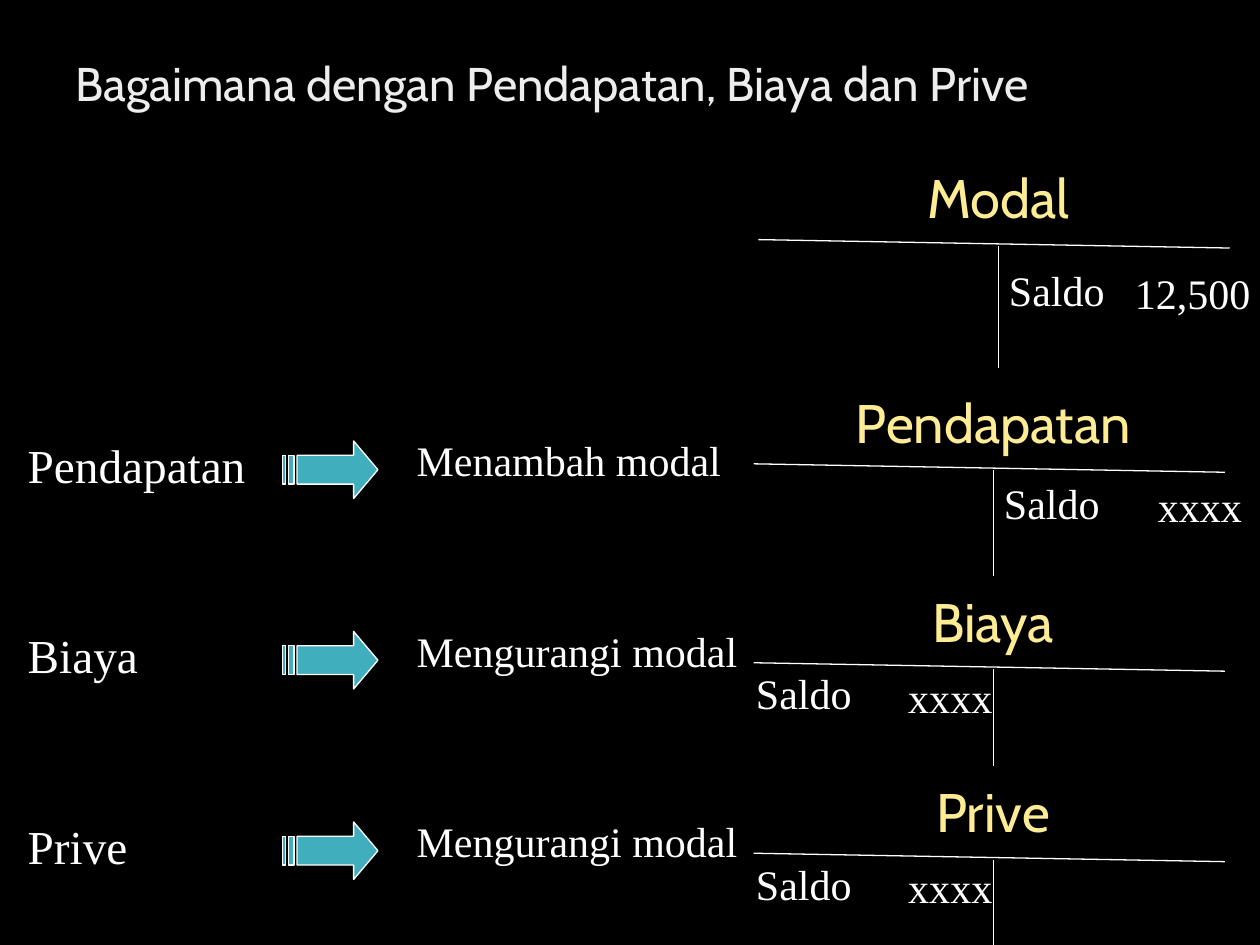
from dataclasses import dataclass

from lxml import etree
from pptx import Presentation
from pptx import util as u
from pptx.dml.color import RGBColor
from pptx.enum import shapes, text
from pptx.oxml.ns import qn


@dataclass(frozen=True)
class Theme:
    background: str = "000000"
    heading: str = "EDEDED"
    account: str = "FEEC94"
    ink: str = "FFFFFF"
    arrow: str = "41AEBD"
    display_font: str = "Cabin"
    body_font: str = "Times New Roman"
    heading_size: int = 27
    account_size: int = 31
    source_size: int = 27
    entry_size: int = 24
    line_width: float = 0.75


THEME = Theme()


def rgb(value):
    return RGBColor.from_string(value)


def add_label(slide, wording, left, top, width, height, size,
              color=THEME.ink, font=THEME.body_font):
    label = slide.shapes.add_textbox(u.Cm(left), u.Cm(top), u.Cm(width), u.Cm(height))
    frame = label.text_frame
    frame.text = wording
    frame.word_wrap = False
    frame.auto_size = text.MSO_AUTO_SIZE.SHAPE_TO_FIT_TEXT
    frame.margin_left = frame.margin_right = u.Cm(0.2)
    frame.margin_top = frame.margin_bottom = u.Cm(0.1)
    run = frame.paragraphs[0].runs[0]
    run.font.name = font
    run.font.size = u.Pt(size)
    run.font.color.rgb = rgb(color)
    return frame


def add_display(slide, *args):
    """Wrapped, vertically centred label in the display font."""
    frame = add_label(slide, *args, font=THEME.display_font)
    frame.word_wrap = True
    frame.auto_size = text.MSO_AUTO_SIZE.NONE
    frame.vertical_anchor = text.MSO_ANCHOR.MIDDLE
    return frame


def add_rule(slide, x1, y1, x2, y2):
    rule = slide.shapes.add_connector(
        shapes.MSO_CONNECTOR.STRAIGHT, u.Cm(x1), u.Cm(y1), u.Cm(x2), u.Cm(y2))
    rule.line.color.rgb = rgb(THEME.ink)
    rule.line.width = u.Pt(THEME.line_width)
    etree.SubElement(rule._element.spPr, qn("a:effectLst"))


def add_striped_arrow(slide, left, top):
    upper, lower = 0.29, 0.87
    head = [(1.44, 0), (1.44, upper), (0.3, upper), (0.3, lower),
            (1.44, lower), (1.44, 1.16), (1.93, 0.58)]
    stripes = [[(x1, upper), (x1, lower), (x2, lower), (x2, upper)]
               for x1, x2 in ((0.12, 0.24), (0, 0.07))]
    contours = [[(u.Cm(left + x), u.Cm(top + y)) for x, y in contour]
                for contour in (head, *stripes)]
    builder = slide.shapes.build_freeform(*contours[0][0])
    builder.add_line_segments(contours[0][1:], close=True)
    for contour in contours[1:]:
        builder.move_to(*contour[0])
        builder.add_line_segments(contour[1:], close=True)
    arrow = builder.convert_to_shape()
    arrow.shadow.inherit = False
    arrow.fill.solid()
    arrow.fill.fore_color.rgb = rgb(THEME.arrow)
    arrow.line.color.rgb = rgb(THEME.ink)
    arrow.line.width = u.Pt(THEME.line_width)


def add_effect(slide, source, source_width, effect, effect_width, top):
    """One row: source, arrow, effect on capital."""
    add_label(slide, source, 0.36, top, source_width, 1.37, THEME.source_size)
    add_striped_arrow(slide, 5.69, top + 0.2)
    add_label(slide, effect, 8.2, top - 0.03, effect_width, 1.24, THEME.entry_size)


def add_account(slide, name, left, top, bottom, saldo, amount, amount_width):
    """T account; saldo is an (x, y) offset, amount is (wording, x offset)."""
    stem = left + 4.84
    add_rule(slide, left, top, left + 9.5, top + 0.17)
    add_rule(slide, stem, top + 0.13, stem, bottom)
    heading = add_display(slide, name, left + 0.5, top - 1.4, 8.66, 1.09,
                          THEME.account_size, THEME.account)
    heading.paragraphs[0].alignment = text.PP_ALIGN.CENTER
    saldo_x, saldo_y = saldo
    wording, amount_x = amount
    add_label(slide, "Saldo", left + saldo_x, top + saldo_y, 2.39, 1.24,
              THEME.entry_size)
    add_label(slide, wording, left + amount_x, top + saldo_y + 0.07,
              amount_width, 1.24, THEME.entry_size)


def main():
    deck = Presentation()
    deck.slide_width, deck.slide_height = u.Cm(25.4), u.Cm(19.05)
    slide = deck.slides.add_slide(deck.slide_layouts[6])
    slide.background.fill.solid()
    slide.background.fill.fore_color.rgb = rgb(THEME.background)

    # Heading
    heading = add_display(slide, "Bagaimana dengan Pendapatan, Biaya dan Prive",
                          1.27, 0.76, 22.86, 1.96, THEME.heading_size, THEME.heading)
    heading.margin_left = heading.margin_right = u.Cm(0.25)
    heading.paragraphs[0].line_spacing = 0.9

    # Effects on capital
    effects = [
        ("Pendapatan", 5.11, "Menambah modal", 6.83),
        ("Biaya", 2.92, "Mengurangi modal", 7.16),
        ("Prive", 2.72, "Mengurangi modal", 7.16),
    ]
    for row, effect in enumerate(effects):
        add_effect(slide, *effect, top=8.69 + 3.84 * row)

    # T accounts: credit balances on the right, debit balances on the left
    debit = ((-0.15, 0), ("xxxx", 2.92), 2.13)
    add_account(slide, "Modal", 15.29, 4.83, 7.42, (4.85, 0.4), ("12,500", 7.39), 2.79)
    add_account(slide, "Pendapatan", 15.19, 9.35, 11.61, (4.85, 0.17), ("xxxx", 7.95), 2.13)
    add_account(slide, "Biaya", 15.19, 13.36, 15.44, *debit)
    add_account(slide, "Prive", 15.19, 17.2, 19.05, *debit)

    deck.save("out.pptx")


if __name__ == "__main__":
    main()
